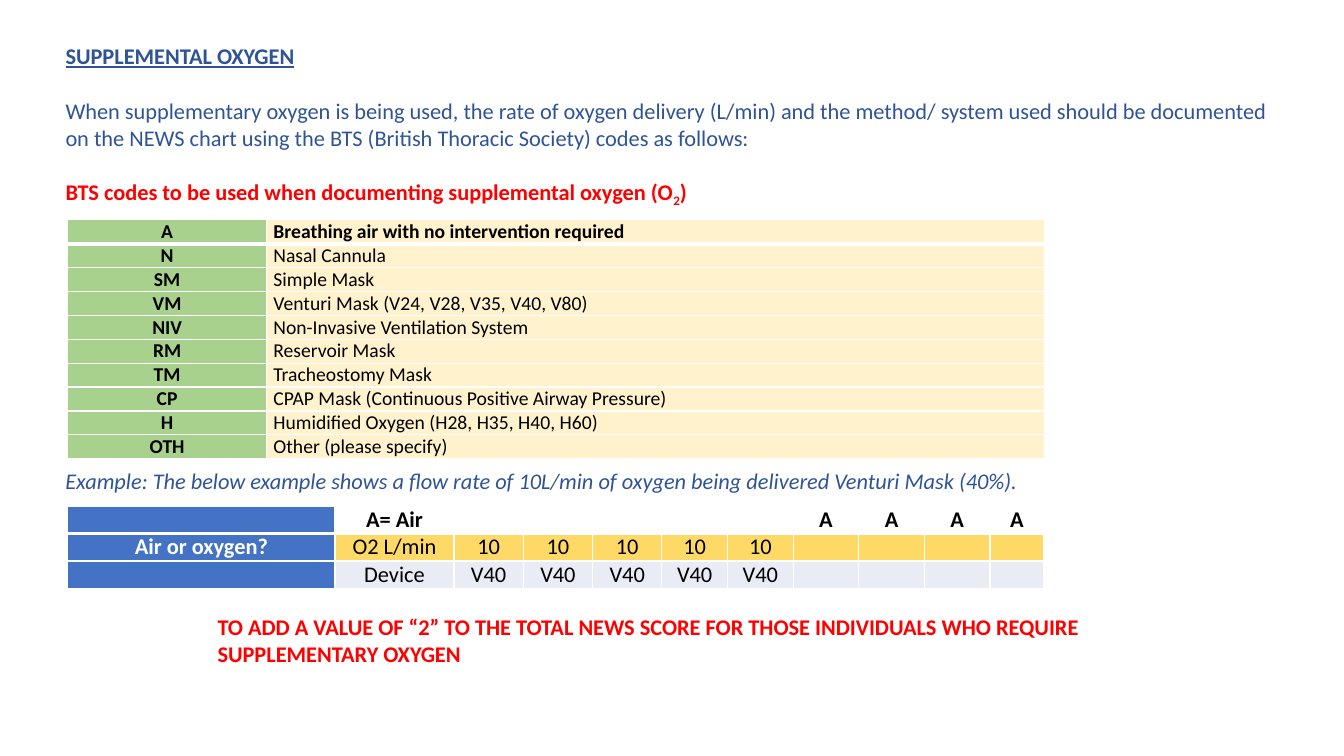
from dataclasses import dataclass

from lxml import etree
from pptx import Presentation
from pptx.dml.color import RGBColor
from pptx.enum.text import MSO_ANCHOR, MSO_AUTO_SIZE, PP_ALIGN
from pptx.oxml.ns import qn
from pptx.util import Pt

LEFT, CENTER = PP_ALIGN.LEFT, PP_ALIGN.CENTER
TOP = MSO_ANCHOR.TOP
NO_AUTOFIT = MSO_AUTO_SIZE.NONE


@dataclass(frozen=True)
class Theme:
    font: str = "Calibri"
    text_size: float = 16
    code_size: float = 14
    line_height: float = 19.5
    navy: str = "2F5496"
    red: str = "FF0000"
    black: str = "000000"
    white: str = "FFFFFF"
    green: str = "A9D18E"
    cream: str = "FFF2CC"
    blue: str = "4472C4"
    gold: str = "FFD966"
    mist: str = "E9EBF5"


THEME = Theme()

BTS_CODES = [
    ("A", "Breathing air with no intervention required"),
    ("N", "Nasal Cannula"),
    ("SM", "Simple Mask"),
    ("VM", "Venturi Mask (V24, V28, V35, V40, V80)"),
    ("NIV", "Non-Invasive Ventilation System"),
    ("RM", "Reservoir Mask"),
    ("TM", "Tracheostomy Mask"),
    ("CP", "CPAP Mask (Continuous Positive Airway Pressure)"),
    ("H", "Humidified Oxygen (H28, H35, H40, H60)"),
    ("OTH", "Other (please specify)"),
]

# Label, row heading, then five oxygen readings and four air readings
CHART_ROWS = [
    ["", "A= Air"] + [""] * 5 + ["A"] * 4,
    ["Air or oxygen?", "O2 L/min"] + ["10"] * 5 + [""] * 4,
    ["", "Device"] + ["V40"] * 5 + [""] * 4,
]


def add_span(para, text, color, size=THEME.text_size, bold=False, italic=False):
    span = para.add_run()
    span.text = text
    font = span.font
    font.name, font.size = THEME.font, Pt(size)
    font.bold, font.italic = bold, italic
    font.color.rgb = RGBColor.from_string(color)
    return span


def format_para(para, space_before=0):
    para.alignment = LEFT
    para.line_spacing = 1.0
    para.space_before, para.space_after = Pt(space_before), Pt(0)
    properties = para._p.get_or_add_pPr()
    properties.set("marL", "0")
    properties.set("indent", "0")
    etree.SubElement(properties, qn("a:buNone"))


def place_text(box, left, top, width, height):
    box.left, box.top, box.width, box.height = Pt(left), Pt(top), Pt(width), Pt(height)
    frame = box.text_frame
    frame.word_wrap = True
    frame.auto_size = NO_AUTOFIT
    frame.vertical_anchor = TOP
    para = frame.paragraphs[0]
    format_para(para)
    return para


def add_text(page, left, top, width, height, text, color, **style):
    box = page.shapes.add_textbox(Pt(left), Pt(top), Pt(width), Pt(height))
    add_span(place_text(box, left, top, width, height), text, color, **style)


def add_border(cell, side, width):
    line = etree.SubElement(cell._tc.get_or_add_tcPr(), qn(f"a:ln{side}"), w=str(Pt(width)))
    fill = etree.SubElement(line, qn("a:solidFill"))
    etree.SubElement(fill, qn("a:srgbClr"), val=THEME.white)


def fill_cell(cell, text, fill, size, row, color=THEME.black, bold=False, align=CENTER):
    cell.margin_left = cell.margin_right = Pt(5)
    cell.margin_top = cell.margin_bottom = Pt(0)
    # The rule under the first row is heavier than the rest
    for side, heavy_row in (("L", None), ("R", None), ("T", 1), ("B", 0)):
        add_border(cell, side, 3 if row == heavy_row else 1)
    cell.fill.solid()
    cell.fill.fore_color.rgb = RGBColor.from_string(fill)
    para = cell.text_frame.paragraphs[0]
    para.alignment = align
    if text:
        add_span(para, text, color, size, bold)
    else:
        etree.SubElement(para._p, qn("a:endParaRPr"), sz=str(size * 100))


def add_grid(page, left, top, widths, row_count, row_height):
    table = page.shapes.add_table(
        row_count, len(widths), Pt(left), Pt(top), Pt(sum(widths)), Pt(row_count * row_height)
    ).table
    table.first_row = table.horz_banding = False
    for column, width in zip(table.columns, widths):
        column.width = Pt(width)
    for row in table.rows:
        row.height = Pt(row_height)
    return table


def add_code_table(page):
    table = add_grid(page, 48.5, 157, [141.8, 555.8], len(BTS_CODES), 16.8)
    for row, (code, meaning) in enumerate(BTS_CODES):
        fill_cell(table.cell(row, 0), code, THEME.green, THEME.code_size, row, bold=True)
        fill_cell(table.cell(row, 1), meaning, THEME.cream, THEME.code_size, row,
                  bold=row == 0, align=LEFT)


def add_chart_table(page):
    widths = [190.8, 85] + [49.5] * 3 + [46.9] * 5 + [38.2]
    table = add_grid(page, 48.5, 361.5, widths, len(CHART_ROWS), 19.2)
    row_fills = [THEME.white, THEME.gold, THEME.mist]
    for row, (values, row_fill) in enumerate(zip(CHART_ROWS, row_fills)):
        for column, value in enumerate(values):
            is_label = column == 0
            fill_cell(
                table.cell(row, column), value, THEME.blue if is_label else row_fill,
                THEME.text_size, row, THEME.white if is_label else THEME.black,
                bold=is_label or row == 0,
            )


def main():
    deck = Presentation()
    deck.slide_width, deck.slide_height = Pt(960), Pt(540)
    page = deck.slides.add_slide(deck.slide_layouts[1])

    # Heading
    heading = place_text(page.shapes.title, 39.6, 26.6, 881.3, 27)
    add_span(heading, "SUPPLEMENTAL OXYGEN", THEME.navy, bold=True).font.underline = True

    # Introduction and table caption
    body = page.placeholders[1]
    intro = place_text(body, 39.6, 65.6, 881.3, 85)
    add_span(intro, "When supplementary oxygen is being used, the rate of oxygen delivery (L/min) "
             "and the method/ system used should be documented on the NEWS chart using the BTS "
             "(British Thoracic Society) codes as follows:", THEME.navy)
    caption = body.text_frame.add_paragraph()
    format_para(caption, space_before=THEME.line_height)
    add_span(caption, "BTS codes to be used when documenting supplemental oxygen (O",
             THEME.red, bold=True)
    subscript = add_span(caption, "2", THEME.red, bold=True)
    subscript.font._element.set("baseline", "-25000")
    add_span(caption, ")", THEME.red, bold=True)

    # Codes and worked example
    add_code_table(page)
    add_text(page, 39.6, 329.8, 881.3, 26.6,
             "Example: The below example shows a flow rate of 10L/min of oxygen being delivered "
             "Venturi Mask (40%).", THEME.navy, italic=True)
    add_chart_table(page)

    # Scoring reminder
    add_text(page, 148.3, 434.2, 684, 46,
             "TO ADD A VALUE OF “2” TO THE TOTAL NEWS SCORE FOR THOSE INDIVIDUALS WHO REQUIRE "
             "SUPPLEMENTARY OXYGEN", THEME.red, bold=True)

    deck.save("out.pptx")


if __name__ == "__main__":
    main()
